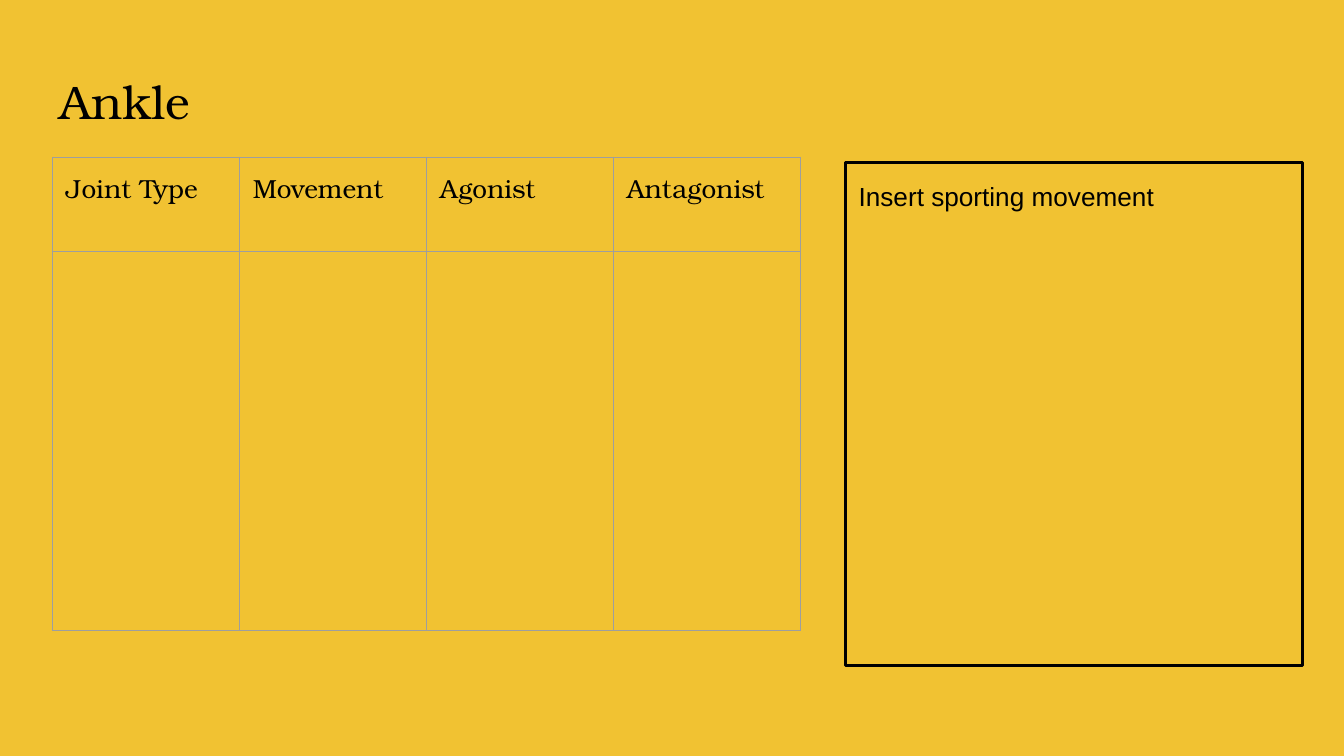
"""Build the ankle joint worksheet slide."""
from dataclasses import dataclass

from lxml.etree import SubElement
from pptx import Presentation
from pptx.dml.color import RGBColor
from pptx.enum.shapes import MSO_SHAPE
from pptx.enum.text import MSO_ANCHOR, PP_ALIGN
from pptx.oxml.ns import qn
from pptx.slide import Slide
from pptx.table import _Cell as Cell
from pptx.text.text import TextFrame
from pptx.util import Pt

COLORS = {"back": "F1C232", "ink": "000000", "grid": "9E9E9E"}
SERIF = "TeX Gyre Bonum"
SANS = "Arial"
HEADS = ("Joint Type", "Movement", "Agonist", "Antagonist")
ROWS = (50.4, 203)
COL = 100.2
PAD = Pt(7.2)


@dataclass(frozen=True)
class Box:
    left: float
    top: float
    width: float
    height: float

    def frame(self) -> tuple[Pt, Pt, Pt, Pt]:
        return Pt(self.left), Pt(self.top), Pt(self.width), Pt(self.height)


@dataclass(frozen=True)
class Style:
    font: str
    size: float
    space: float = 1.0


TITLE = Box(24.5, 35.3, 671, 45.4)
GRID = Box(28.1, 84.2, COL * len(HEADS), sum(ROWS))
PANEL = Box(452.9, 87.1, 244.8, 269.3)


def color(name: str) -> RGBColor:
    return RGBColor.from_string(COLORS[name])


def write(frame: TextFrame, text: str, style: Style) -> None:
    frame.text = text
    frame.word_wrap = True
    frame.vertical_anchor = MSO_ANCHOR.TOP
    frame.margin_left = frame.margin_right = PAD
    frame.margin_top = frame.margin_bottom = PAD
    line = frame.paragraphs[0]
    line.alignment = PP_ALIGN.LEFT
    line.line_spacing = style.space
    for run in line.runs:
        run.font.name = style.font
        run.font.size = Pt(style.size)
        run.font.color.rgb = color("ink")


def border(cell: Cell) -> None:
    props = cell._tc.get_or_add_tcPr()
    for spot, side in enumerate(("lnL", "lnR", "lnT", "lnB")):
        line = SubElement(props, qn(f"a:{side}"), w=str(Pt(0.75)))
        fill = SubElement(line, qn("a:solidFill"))
        SubElement(fill, qn("a:srgbClr"), val=COLORS["grid"])
        props.insert(spot, line)


def add_title(slide: Slide, text: str, box: Box) -> None:
    title = slide.shapes.title
    title.left, title.top, title.width, title.height = box.frame()
    write(title.text_frame, text, Style(SERIF, 25.2, 0.9))


def add_grid(slide: Slide, box: Box) -> None:
    table = slide.shapes.add_table(len(ROWS), len(HEADS), *box.frame()).table
    table.first_row = table.horz_banding = False
    for col in table.columns:
        col.width = Pt(COL)
    for row, height in zip(table.rows, ROWS):
        row.height = Pt(height)
    for cell in table.iter_cells():
        cell.fill.background()
        cell.margin_left = cell.margin_right = PAD
        cell.margin_top = cell.margin_bottom = PAD
        border(cell)
    for cell, head in zip(table.rows[0].cells, HEADS):
        cell.text = head
        font = cell.text_frame.paragraphs[0].runs[0].font
        font.name, font.size = SERIF, Pt(14)
        font.color.rgb = color("ink")


def add_panel(slide: Slide, text: str, box: Box) -> None:
    panel = slide.shapes.add_shape(MSO_SHAPE.RECTANGLE, *box.frame())
    panel.shadow.inherit = False
    panel.fill.background()
    panel.line.color.rgb = color("ink")
    panel.line.width = Pt(1.5)
    write(panel.text_frame, text, Style(SANS, 14, 1.15))


def main() -> None:
    deck = Presentation()
    deck.slide_width, deck.slide_height = Pt(720), Pt(405)
    slide = deck.slides.add_slide(deck.slide_layouts[5])
    slide.background.fill.solid()
    slide.background.fill.fore_color.rgb = color("back")
    add_title(slide, "Ankle", TITLE)
    add_grid(slide, GRID)
    add_panel(slide, "Insert sporting movement", PANEL)
    deck.save("out.pptx")


if __name__ == "__main__":
    main()
